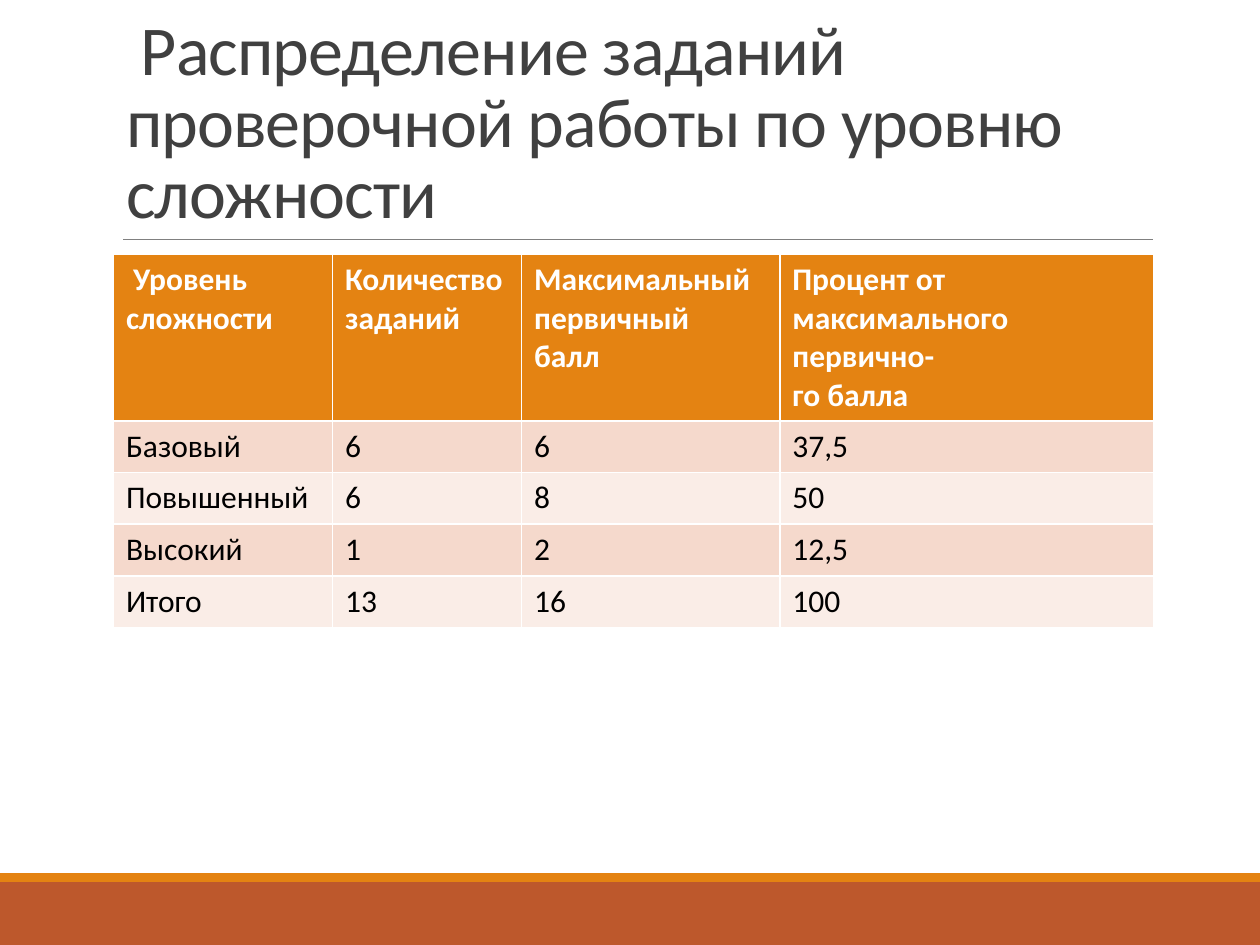
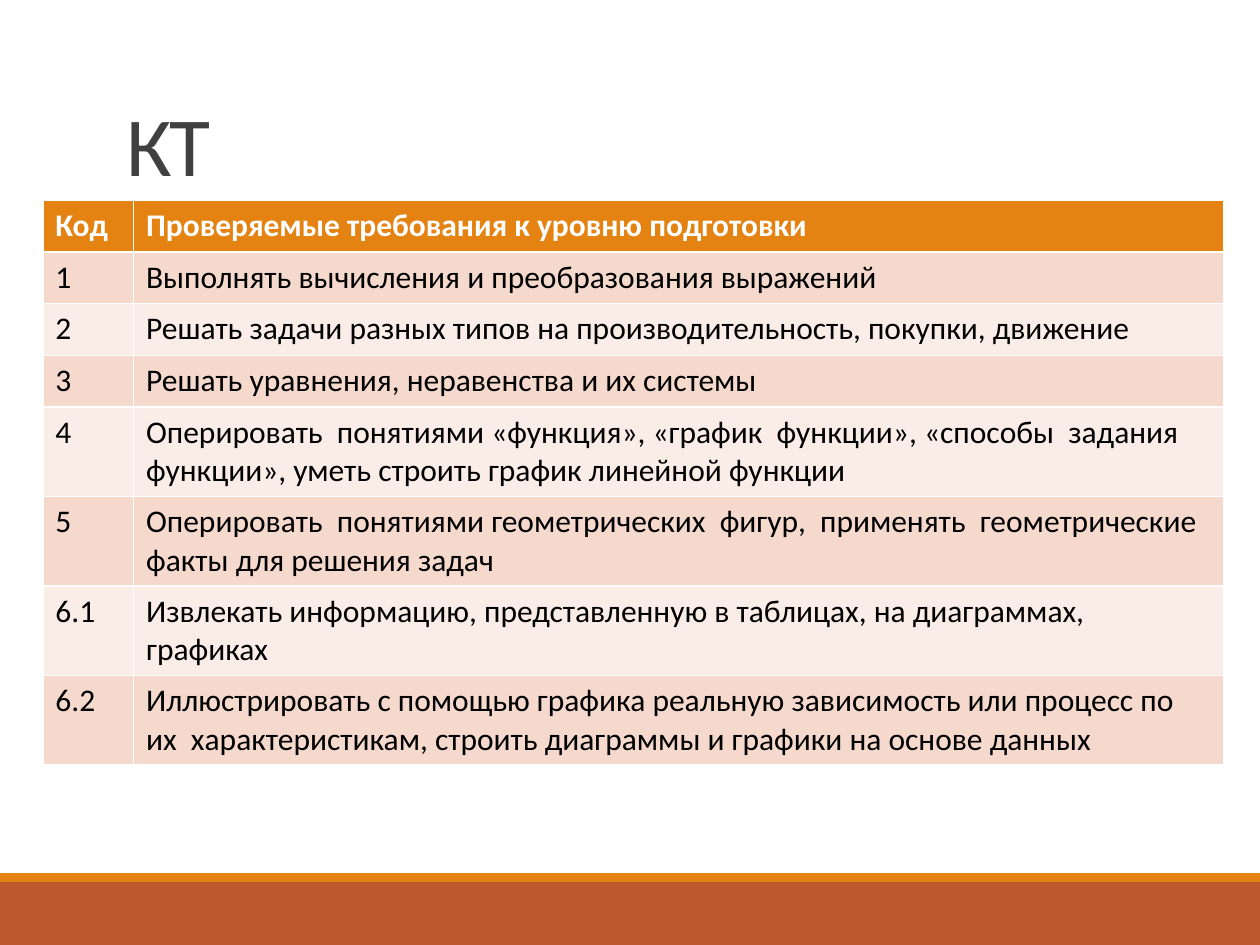
"""Build two slides on the tasks and requirements of a school test."""
import pptx
import pptx.dml.color
import pptx.enum.shapes
import pptx.enum.text
import pptx.oxml
import pptx.util

Inches = pptx.util.Inches
Pt = pptx.util.Pt
RGBColor = pptx.dml.color.RGBColor
TEXT = pptx.enum.text

WHITE = RGBColor(0xFF, 0xFF, 0xFF)
BLACK = RGBColor(0, 0, 0)
DARK = RGBColor(0x40, 0x40, 0x40)
GREY = RGBColor(0x80, 0x80, 0x80)
RUST = RGBColor(0xBD, 0x58, 0x2C)
ORANGE = RGBColor(0xE4, 0x83, 0x12)
BANDS = RGBColor(0xF5, 0xD9, 0xCC), RGBColor(0xFA, 0xED, 0xE7)

FONT = "Calibri"
EDGE = 0.9
WIDTH = 8.25
ROW = 0.41

LEVELS = [
    [" Уровень сложности", "Количество\nзаданий",
     "Максимальный\nпервичный\nбалл",
     "Процент от максимального первично-\nго балла"],
    ["Базовый", "6", "6", "37,5"],
    ["Повышенный", "6", "8", "50"],
    ["Высокий", "1", "2", "12,5"],
    ["Итого", "13", "16", "100"],
]
SKILLS = [
    ["Код", "Проверяемые требования к уровню подготовки"],
    ["1", "Выполнять вычисления и преобразования выражений"],
    ["2", "Решать задачи разных типов на производительность, покупки, движение"],
    ["3", "Решать уравнения, неравенства и их системы"],
    ["4", "Оперировать  понятиями «функция», «график  функции», «способы  задания\n"
          "функции», уметь строить график линейной функции"],
    ["5", "Оперировать  понятиями геометрических  фигур,  применять  геометрические\n"
          "факты для решения задач"],
    ["6.1", "Извлекать информацию, представленную в таблицах, на диаграммах, графиках"],
    ["6.2", "Иллюстрировать с помощью графика реальную зависимость или процесс по "
            "их  характеристикам, строить диаграммы и графики на основе данных"],
]


def assign(item, values):
    """Set each named attribute of the item."""
    for name, value in values.items():
        setattr(item, name, value)


class Deck:
    """Hold the shared style and the current slide."""

    def __init__(self):
        """Open a blank deck of ten by seven and a half inches."""
        self.deck = pptx.Presentation()
        assign(self.deck, {"slide_width": Inches(10), "slide_height": Inches(7.5)})
        self.slide = None

    def start(self, text, top, size):
        """Add a slide with its title, footer bands and rule."""
        self.slide = self.deck.slides.add_slide(self.deck.slide_layouts[5])
        self.band(7, 0.5, RUST)
        self.band(6.93, 0.07, ORANGE)
        self.rule(0.98, 9.15, 1.9)
        self.title(text, top, size)

    def band(self, top, height, color):
        """Draw a full-width band."""
        band = self.slide.shapes.add_shape(
            pptx.enum.shapes.MSO_SHAPE.RECTANGLE,
            0, Inches(top), Inches(10), Inches(height))
        band.shadow.inherit = False
        band.fill.solid()
        band.fill.fore_color.rgb = color
        band.line.fill.background()

    def rule(self, left, right, top):
        """Draw a thin level line."""
        rule = self.slide.shapes.add_connector(
            pptx.enum.shapes.MSO_CONNECTOR.STRAIGHT,
            Inches(left), Inches(top), Inches(right), Inches(top))
        rule.line.color.rgb = GREY
        rule.line.width = Pt(0.5)
        rule._element.spPr.append(
            pptx.oxml.parse_xml(
                '<a:effectLst xmlns:a='
                '"http://schemas.openxmlformats.org/drawingml/2006/main"/>'))

    def title(self, text, top, size):
        """Place and format the title."""
        title = self.slide.shapes.title
        assign(title, {"left": Inches(EDGE), "top": Inches(top),
                       "width": Inches(WIDTH), "height": Inches(1.59)})
        frame = title.text_frame
        frame.text = text
        assign(frame, {"vertical_anchor": TEXT.MSO_ANCHOR.BOTTOM, "word_wrap": True,
                       "auto_size": TEXT.MSO_AUTO_SIZE.NONE})
        para = frame.paragraphs[0]
        assign(para, {"alignment": TEXT.PP_ALIGN.LEFT, "line_spacing": 0.85})
        self.style(para, size, DARK)
        para.runs[0]._r.get_or_add_rPr().set("spc", "-50")

    def style(self, para, size, color, bold=False):
        """Format the runs of a paragraph."""
        for run in para.runs:
            assign(run.font, {"name": FONT, "size": Pt(size), "bold": bold})
            run.font.color.rgb = color

    def table(self, left, top, widths, rows):
        """Add a table with a bold head and banded rows."""
        table = self.slide.shapes.add_table(
            len(rows), len(widths), Inches(left), Inches(top),
            Inches(sum(widths)), Inches(ROW * len(rows))).table
        for column, width in zip(table.columns, widths):
            column.width = Inches(width)
        for index, row in enumerate(rows):
            head = index == 0
            fill = ORANGE if head else BANDS[(index - 1) % 2]
            for cell, text in zip(table.rows[index].cells, row):
                cell.text = text
                cell.fill.solid()
                cell.fill.fore_color.rgb = fill
                for para in cell.text_frame.paragraphs:
                    self.style(para, 18, WHITE if head else BLACK, head)


def main():
    """Build and save both slides."""
    deck = Deck()
    deck.start(" Распределение заданий проверочной работы по уровню сложности", 0.31, 40)
    deck.table(EDGE, 2.02, [1.74, 1.5, 2.05, 2.97], LEVELS)
    deck.start("КТ", 0, 48)
    deck.table(0.34, 1.59, [0.72, 8.65], SKILLS)
    deck.deck.save("out.pptx")


if __name__ == "__main__":
    main()
